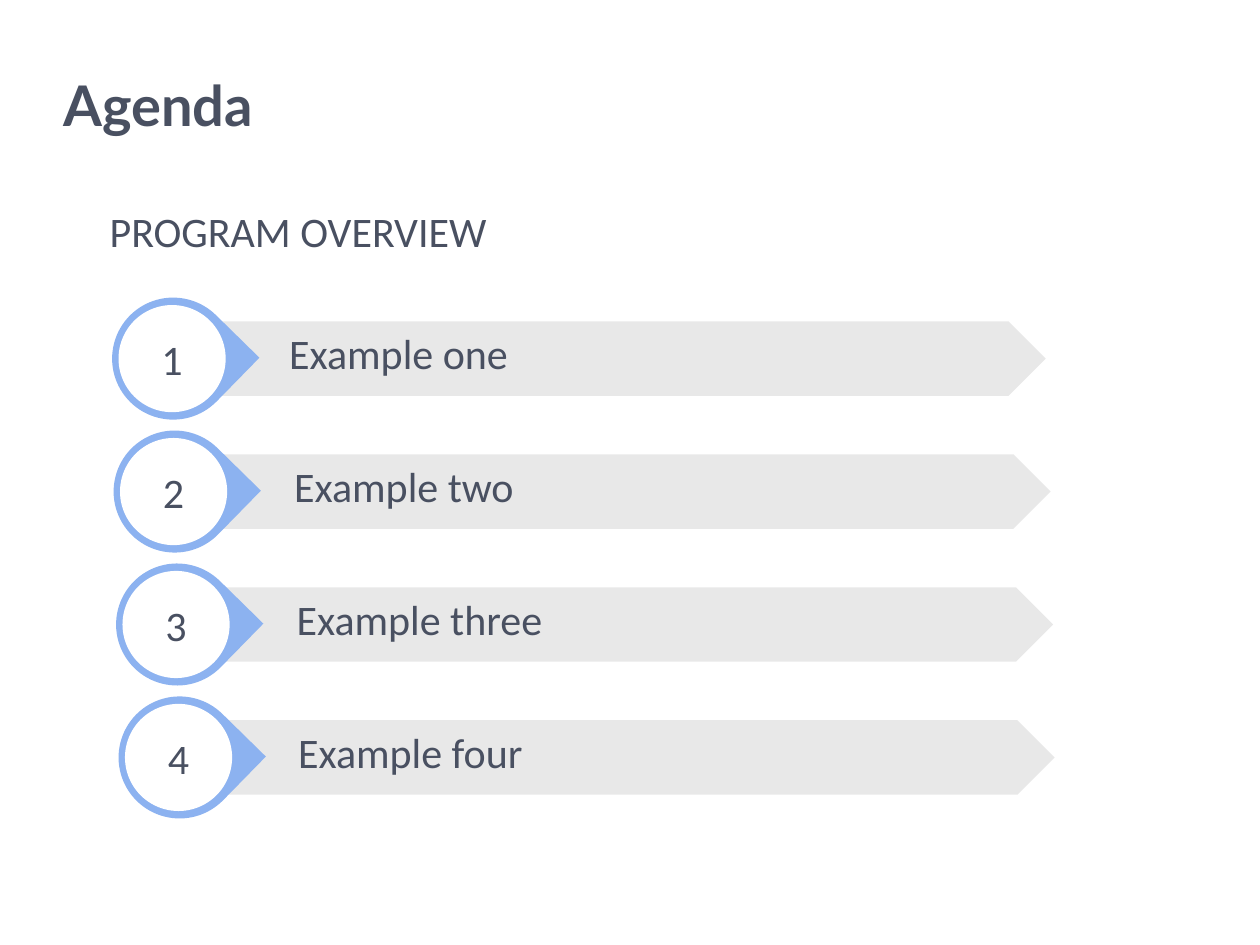
"""Build the agenda slide with four numbered steps."""
from dataclasses import dataclass

from pptx import Presentation
from pptx.dml.color import RGBColor
from pptx.enum.shapes import MSO_SHAPE as Preset
from pptx.enum.text import MSO_ANCHOR as Anchor, PP_ALIGN as Align
from pptx.util import Cm, Pt


@dataclass(frozen=True)
class Theme:
    text: RGBColor = RGBColor(0x49, 0x50, 0x61)
    bar: RGBColor = RGBColor(0xE8, 0xE8, 0xE8)
    accent: RGBColor = RGBColor(0x8C, 0xB2, 0xF0)
    disc: RGBColor = RGBColor(0xFF, 0xFF, 0xFF)
    title_font: str = "Lato"
    body_font: str = "Calibri"
    title_size: Pt = Pt(32)
    body_size: Pt = Pt(24)


theme = Theme()


def write(shape, text, anchor=Anchor.TOP, align=Align.LEFT, indent=0,
          font=theme.body_font, size=theme.body_size, bold=False):
    frame = shape.text_frame
    frame.word_wrap = True
    frame.vertical_anchor = anchor
    paragraph = frame.paragraphs[0]
    paragraph.alignment = align
    properties = paragraph._p.get_or_add_pPr()
    properties.set("marL", str(Cm(indent)))
    properties.set("indent", "0")
    run = paragraph.add_run()
    run.text = text
    run.font.name = font
    run.font.size = size
    run.font.bold = bold
    run.font.color.rgb = theme.text
    return paragraph


def add_filled(preset, left, center, width, height, color):
    shape = slide.shapes.add_shape(
        preset, Cm(left), Cm(center - height / 2), Cm(width), Cm(height))
    shape.shadow.inherit = False
    shape.fill.solid()
    shape.fill.fore_color.rgb = color
    shape.line.fill.background()
    return shape


presentation = Presentation()
presentation.slide_width = Cm(25.4)
presentation.slide_height = Cm(19.05)
slide = presentation.slides.add_slide(presentation.slide_layouts[5])

title = slide.shapes.title
title.left, title.top, title.width, title.height = Cm(0), Cm(1.3), Cm(25.4), Cm(2.16)
write(title, "Agenda", indent=1.02, font=theme.title_font,
      size=theme.title_size, bold=True)

heading = slide.shapes.add_textbox(Cm(1.96), Cm(4.14), Cm(9.42), Cm(1.24))
write(heading, "PROGRAM OVERVIEW").line_spacing = 0.9

first_center, row_pitch = 7.23, 2.68
steps = [
    ("Example one", 4.32, 2.26),
    ("Example two", 4.42, 2.29),
    ("Example three", 4.47, 2.34),
    ("Example four", 4.5, 2.39),
]
for row, (label, bar_left, badge_left) in enumerate(steps):
    center = first_center + row * row_pitch
    bar = add_filled(Preset.CHEVRON, bar_left, center, 16.76, 1.5, theme.bar)
    write(bar, label, indent=0.51)
    badge = add_filled(Preset.TEAR, badge_left, center, 2.46, 2.46, theme.accent)
    badge.rotation = 44.4
    disc = add_filled(Preset.OVAL, badge_left + 0.13, center, 2.16, 2.16, theme.disc)
    write(disc, str(row + 1), Anchor.MIDDLE, Align.CENTER)

presentation.save("out.pptx")
